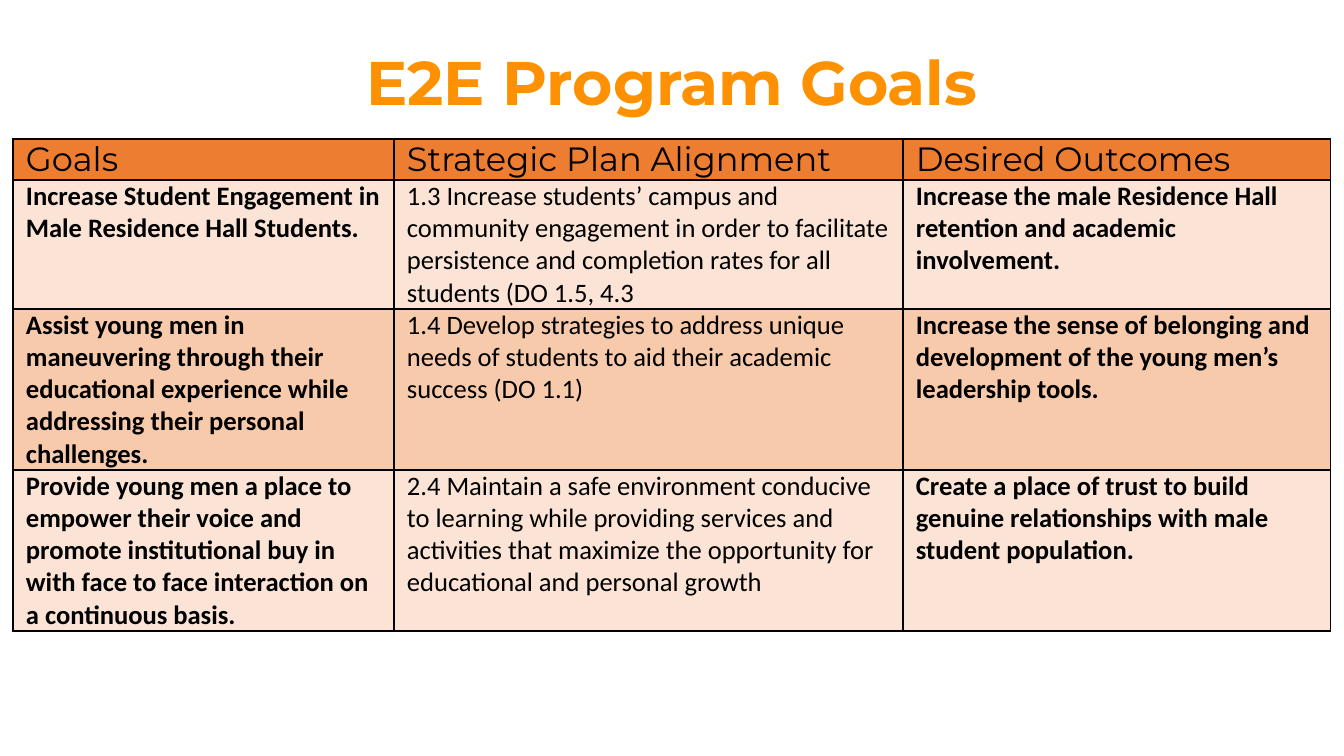
from lxml.etree import SubElement
from pptx import Presentation
from pptx.dml.color import RGBColor
from pptx.enum.text import MSO_ANCHOR, PP_ALIGN
from pptx.oxml import parse_xml
from pptx.oxml.ns import nsdecls, qn
from pptx.util import Emu, Pt

THEME = {
    "title": "FD9101", "outline": "C55A11", "text": "000000", "border": "000000",
    "header": "ED7D31", "bands": ["FBE4D5", "F7CAAC"],
    "heading_font": "Montserrat", "body_font": "Calibri",
    "title_size": 44, "header_size": 24, "body_size": 19,
}
COLUMNS = [381, 509, 428]
ROWS = [41, 129, 161, 161]
GOALS = [
    ["Goals", "Strategic Plan Alignment", "Desired Outcomes"],
    ["Increase Student Engagement in Male Residence Hall Students.",
     "1.3 Increase students’ campus and community engagement in order to facilitate "
     "persistence and completion rates for all students (DO 1.5, 4.3",
     "Increase the male Residence Hall retention and academic involvement."],
    ["Assist young men in maneuvering through their educational experience while "
     "addressing their personal challenges.",
     "1.4 Develop strategies to address unique needs of students to aid their academic "
     "success (DO 1.1)",
     "Increase the sense of belonging and development of the young men’s leadership tools."],
    ["Provide young men a place to empower their voice and promote institutional buy in "
     "with face to face interaction on a continuous basis.",
     "2.4 Maintain a safe environment conducive to learning while providing services and "
     "activities that maximize the opportunity for educational and personal growth",
     "Create a place of trust to build genuine relationships with male student population."],
]


def px(n):
    return Emu(round(n * 914400 / 100.8))


def add_run(p, text, font, size, color, bold):
    r = p.add_run()
    r.text = text
    r.font.name = font
    r.font.size = Pt(size)
    r.font.bold = bold
    r.font.color.rgb = RGBColor.from_string(color)
    return r


prs = Presentation()
prs.slide_width, prs.slide_height = px(1344), px(756)
s = prs.slides.add_slide(prs.slide_layouts[6])

sp = s.shapes.add_textbox(px(92), px(40), px(1160), px(92))
tf = sp.text_frame
tf.word_wrap = True
tf.vertical_anchor = MSO_ANCHOR.MIDDLE
p = tf.paragraphs[0]
p.alignment = PP_ALIGN.CENTER
p.line_spacing = 0.9
r = add_run(p, "E2E Program Goals", THEME["heading_font"], THEME["title_size"], THEME["title"], True)
r.font._element.insert(0, parse_xml(
    f'<a:ln {nsdecls("a")} w="9525"><a:solidFill><a:srgbClr val="{THEME["outline"]}"/>'
    '</a:solidFill></a:ln>'))

table = s.shapes.add_table(len(ROWS), len(COLUMNS), px(13), px(139),
                           px(sum(COLUMNS)), px(sum(ROWS))).table
for column, width in zip(table.columns, COLUMNS):
    column.width = px(width)
for row, height in zip(table.rows, ROWS):
    row.height = px(height)

for i, texts in enumerate(GOALS):
    header = i == 0
    fill = THEME["header"] if header else THEME["bands"][(i - 1) % 2]
    font = THEME["heading_font"] if header else THEME["body_font"]
    size = THEME["header_size"] if header else THEME["body_size"]
    for j, text in enumerate(texts):
        cell = table.cell(i, j)
        cell.margin_left = cell.margin_right = px(13)
        cell.margin_top = cell.margin_bottom = 0
        tcPr = cell._tc.get_or_add_tcPr()
        for side in ("a:lnL", "a:lnR", "a:lnT", "a:lnB"):
            ln = SubElement(tcPr, qn(side), w=str(Pt(1)))
            line_fill = SubElement(ln, qn("a:solidFill"))
            SubElement(line_fill, qn("a:srgbClr"), val=THEME["border"])
        cell.fill.solid()
        cell.fill.fore_color.rgb = RGBColor.from_string(fill)
        p = cell.text_frame.paragraphs[0]
        add_run(p, text, font, size, THEME["text"], not header and j != 1)

prs.save("out.pptx")
